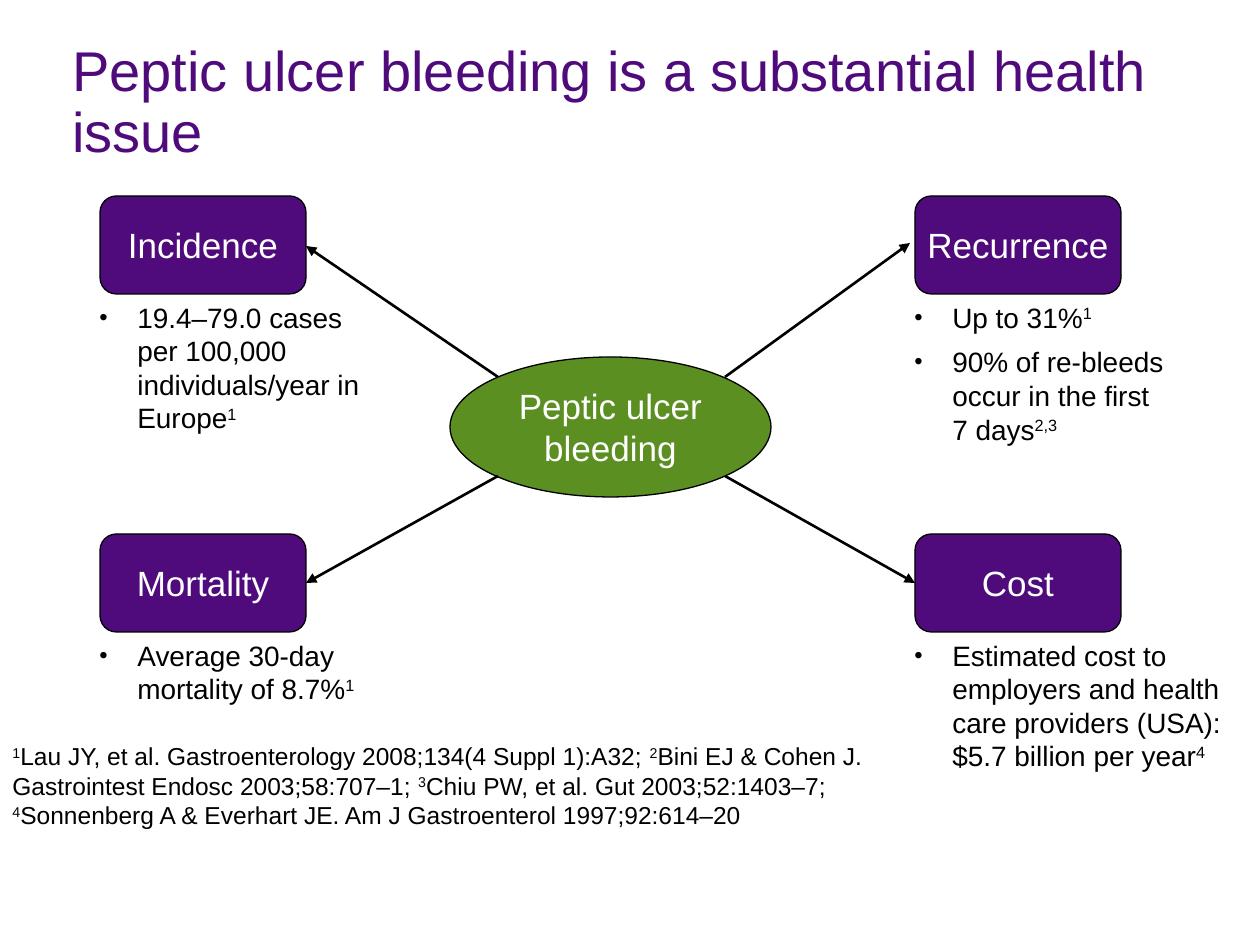
import pptx
import pptx.dml.color
import pptx.enum.shapes
import pptx.enum.text
import pptx.oxml.ns
import pptx.util
from lxml import etree

EMU_PER_PX = 914400 / 126
COLORS = {"purple": "4F0B7B", "green": "5B8F22", "black": "000000", "white": "FFFFFF"}
SHAPES = pptx.enum.shapes.MSO_SHAPE
ALIGN = pptx.enum.text.PP_ALIGN
ANCHOR = pptx.enum.text.MSO_ANCHOR


def px(length):
    return pptx.util.Emu(round(length * EMU_PER_PX))


def color(name):
    return pptx.dml.color.RGBColor.from_string(COLORS[name])


def add_child(parent, tag, **attributes):
    return etree.SubElement(parent, pptx.oxml.ns.qn(tag), **attributes)


class SlideBuilder:
    font = "Arial"

    def __init__(self, slide):
        self.slide = slide

    def add_spans(self, para, spans, size, ink):
        """Add (text, is_superscript) spans to a paragraph; a newline is a line break."""
        para.font.size = pptx.util.Pt(size)
        for text, superscript in spans:
            for index, line in enumerate(text.split("\n")):
                if index:
                    para.add_line_break()
                span = para.add_run()
                span.text = line
                span.font.name = self.font
                span.font.size = pptx.util.Pt(size)
                span.font.color.rgb = color(ink)
                if superscript:
                    span._r.get_or_add_rPr().set("baseline", "30000")

    def text_box(self, bounds):
        box = self.slide.shapes.add_textbox(*map(px, bounds))
        box.text_frame.word_wrap = True
        return box.text_frame

    def text(self, bounds, spans, size, ink="black", line_spacing=1.0):
        para = self.text_box(bounds).paragraphs[0]
        para.line_spacing = line_spacing
        self.add_spans(para, spans, size, ink)

    def bullets(self, bounds, items):
        frame = self.text_box(bounds)
        for index, spans in enumerate(items):
            para = frame.add_paragraph() if index else frame.paragraphs[0]
            if index:
                para.space_before = pptx.util.Pt(6.4)
            properties = para._p.get_or_add_pPr()
            properties.set("marL", str(px(38)))
            properties.set("indent", str(-px(38)))
            add_child(properties, "a:buSzPct", val="85000")
            add_child(properties, "a:buFont", typeface=self.font)
            add_child(properties, "a:buChar", char="•")
            self.add_spans(para, spans, 16, "black")

    def node(self, kind, bounds, label, fill):
        shape = self.slide.shapes.add_shape(kind, *map(px, bounds))
        shape.shadow.inherit = False
        shape.fill.solid()
        shape.fill.fore_color.rgb = color(fill)
        shape.line.color.rgb = color("black")
        shape.line.width = pptx.util.Pt(0.75)
        frame = shape.text_frame
        frame.word_wrap = True
        frame.vertical_anchor = ANCHOR.MIDDLE
        frame.margin_left = frame.margin_right = 0
        frame.margin_top = frame.margin_bottom = 0
        para = frame.paragraphs[0]
        para.alignment = ALIGN.CENTER
        self.add_spans(para, [(label, False)], 20, "white")

    def arrow(self, start, end):
        line = self.slide.shapes.add_connector(
            pptx.enum.shapes.MSO_CONNECTOR.STRAIGHT, *map(px, start + end))
        line.line.color.rgb = color("black")
        line.line.width = pptx.util.Pt(1.5)
        add_child(line.line._get_or_add_ln(), "a:tailEnd", type="triangle")
        add_child(line._element.spPr, "a:effectLst")


def main():
    deck = pptx.Presentation()
    deck.slide_width, deck.slide_height = px(1260), px(945)
    page = SlideBuilder(deck.slides.add_slide(deck.slide_layouts[6]))

    page.text((60, 37, 1119, 157),
              [("Peptic ulcer bleeding is a substantial health issue", False)],
              32, "purple", line_spacing=0.9)
    page.text((0, 735, 925, 101), [
        ("1", True),
        ("Lau JY, et al. Gastroenterology 2008;134(4 Suppl 1):A32; ", False),
        ("2", True),
        ("Bini EJ & Cohen J. Gastrointest Endosc 2003;58:707–1; ", False),
        ("3", True),
        ("Chiu PW, et al. Gut 2003;52:1403–7; ", False),
        ("4", True),
        ("Sonnenberg A & Everhart JE. Am J Gastroenterol 1997;92:614–20", False),
    ], 14)

    page.node(SHAPES.OVAL, (450, 357, 321, 140), "Peptic ulcer bleeding", "green")

    left, right, top, bottom = 100, 915, 196, 534
    card_width, card_height = 206, 98
    # label, card corner, width of the bullets, bullets, arrow start, arrow end
    topics = [
        ("Incidence", left, top, 291,
         [[("19.4–79.0 cases per 100,000 individuals/year in Europe", False), ("1", True)]],
         (498, 377), (306, 246)),
        ("Recurrence", right, top, 290,
         [[("Up to 31%", False), ("1", True)],
          [("90% of re-bleeds occur in the first \n7 days", False), ("2,3", True)]],
         (725, 377), (910, 243)),
        ("Mortality", left, bottom, 286,
         [[("Average 30-day mortality of 8.7%", False), ("1", True)]],
         (498, 476), (306, 583)),
        ("Cost", right, bottom, 358,
         [[("Estimated cost to employers and health care providers (USA): "
            "$5.7 billion per year", False), ("4", True)]],
         (725, 476), (915, 583)),
    ]
    for label, x, y, width, items, start, end in topics:
        page.node(SHAPES.ROUNDED_RECTANGLE, (x, y, card_width, card_height), label, "purple")
        page.bullets((x - 13, y + card_height, width, 150), items)
        page.arrow(start, end)

    deck.save("out.pptx")


if __name__ == "__main__":
    main()
